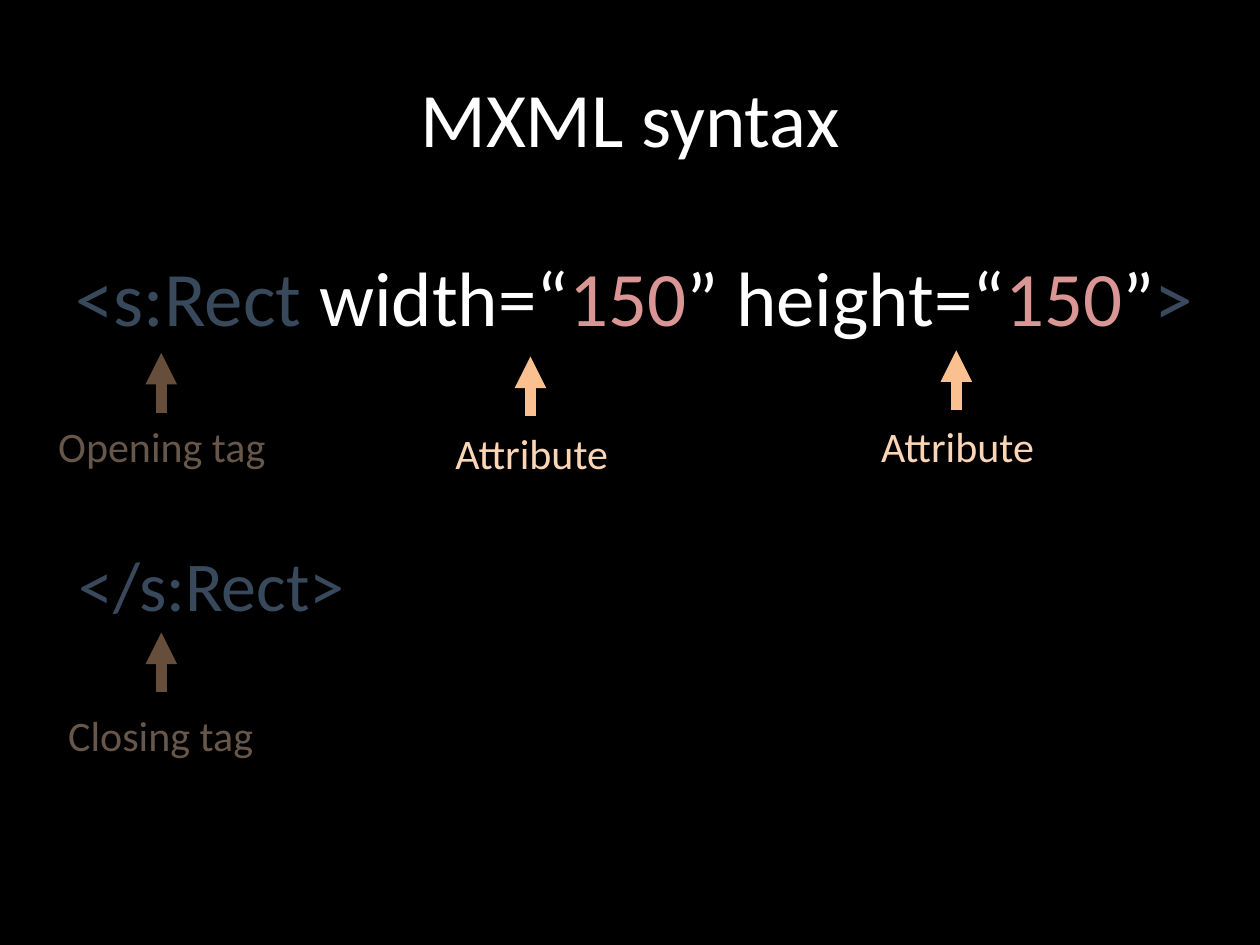
from dataclasses import dataclass

from lxml.etree import SubElement
from pptx import Presentation
from pptx.dml.color import RGBColor
from pptx.enum.shapes import MSO_CONNECTOR, MSO_SHAPE
from pptx.enum.text import MSO_ANCHOR, MSO_AUTO_SIZE, PP_ALIGN
from pptx.oxml.ns import qn
from pptx.util import Inches, Pt

COLORS = {
    "black": "000000",
    "white": "FFFFFF",
    "tag": "8EB4E3",
    "value": "D99694",
    "label": "FCD5B5",
    "arrow": "FAC090",
}


@dataclass
class Text:
    box: tuple[float, float, float, float]
    size: int
    runs: list[tuple[str, str]]
    align: PP_ALIGN = PP_ALIGN.CENTER
    title: bool = False


@dataclass
class Arrow:
    x: float
    top: float
    base: float


@dataclass
class Shade:
    box: tuple[float, float, float, float]


TEXTS = [
    Text((0.5, 0.3, 9, 1.25), 44, [("MXML syntax", "white")], title=True),
    Text((0.5, 1.93, 9.17, 0.84), 44, [
        ("<s:Rect ", "tag"), ("width=“", "white"), ("150", "value"),
        ("” height=“", "white"), ("150", "value"), ("”", "white"), (">", "tag"),
    ], PP_ALIGN.LEFT),
    Text((0.5, 4.25, 2.36, 0.77), 40, [("</s:Rect>", "tag")]),
    Text((0.35, 3.29, 1.87, 0.5), 24, [("Opening tag", "label")]),
    Text((0.43, 5.58, 1.69, 0.5), 24, [("Closing tag", "label")]),
    Text((3.5, 3.34, 1.44, 0.5), 24, [("Attribute", "label")]),
    Text((6.88, 3.29, 1.44, 0.5), 24, [("Attribute", "label")]),
]
ARROWS = [
    Arrow(1.28, 2.8, 3.28),
    Arrow(1.28, 5.02, 5.49),
    Arrow(4.21, 2.83, 3.3),
    Arrow(7.59, 2.78, 3.25),
]
SHADES = [
    Shade((0.28, 1.93, 2.15, 2.31)),
    Shade((0.43, 4.42, 2.78, 2.31)),
    Shade((9.2, 1.93, 0.58, 2.31)),
]


def tint(name: str) -> RGBColor:
    return RGBColor.from_string(COLORS[name])


def add_text(slide, item: Text) -> None:
    frame = slide.shapes.add_textbox(*map(Inches, item.box)).text_frame
    form = {
        "word_wrap": item.title,
        "auto_size": MSO_AUTO_SIZE.NONE if item.title else MSO_AUTO_SIZE.SHAPE_TO_FIT_TEXT,
        "vertical_anchor": MSO_ANCHOR.MIDDLE if item.title else MSO_ANCHOR.TOP,
    }
    for key, val in form.items():
        setattr(frame, key, val)
    para = frame.paragraphs[0]
    para.alignment = item.align
    for words, color in item.runs:
        run = para.add_run()
        run.text = words
        for key, val in {"name": "Calibri", "size": Pt(item.size)}.items():
            setattr(run.font, key, val)
        run.font.color.rgb = tint(color)


def add_arrow(slide, item: Arrow) -> None:
    ends = map(Inches, (item.x, item.base, item.x, item.top))
    link = slide.shapes.add_connector(MSO_CONNECTOR.STRAIGHT, *ends)
    link.line.width = Pt(6)
    link.line.color.rgb = tint("arrow")
    SubElement(link.line._get_or_add_ln(), qn("a:tailEnd"), type="triangle")
    SubElement(link._element.spPr, qn("a:effectLst"))


def add_shade(slide, item: Shade) -> None:
    rect = slide.shapes.add_shape(MSO_SHAPE.RECTANGLE, *map(Inches, item.box))
    rect.fill.solid()
    rect.fill.fore_color.rgb = tint("black")
    rect.line.fill.background()
    rect.shadow.inherit = False
    props = rect._element.spPr
    # Half-clear fill
    fill = props.find(qn("a:solidFill")).find(qn("a:srgbClr"))
    SubElement(fill, qn("a:alpha"), val="50000")
    # Soft shadow straight down, which dims the text a little more
    cast = SubElement(
        props.find(qn("a:effectLst")), qn("a:outerShdw"),
        blurRad=str(Pt(3.1)), dist=str(Pt(1.8)), dir="5400000", rotWithShape="0",
    )
    dark = SubElement(cast, qn("a:srgbClr"), val=COLORS["black"])
    SubElement(dark, qn("a:alpha"), val="35000")


def main() -> None:
    deck = Presentation()
    deck.slide_width, deck.slide_height = Inches(10), Inches(7.5)
    slide = deck.slides.add_slide(deck.slide_layouts[6])
    slide.background.fill.solid()
    slide.background.fill.fore_color.rgb = tint("black")

    # Code and labels, then pointers, then the dimming panes on top
    for draw, items in ((add_text, TEXTS), (add_arrow, ARROWS), (add_shade, SHADES)):
        for item in items:
            draw(slide, item)
    deck.save("out.pptx")


if __name__ == "__main__":
    main()
